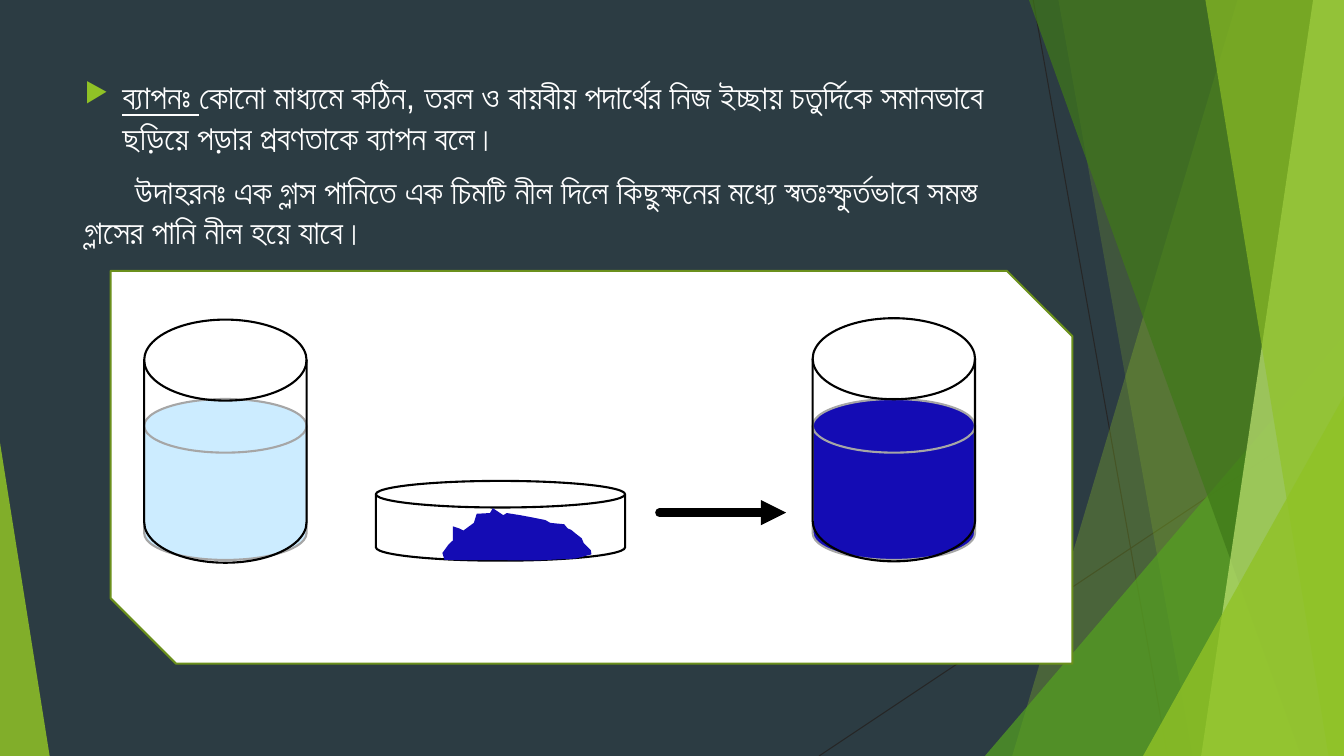
from lxml.etree import SubElement
from pptx import Presentation
from pptx.dml.color import RGBColor
from pptx.enum.shapes import MSO_CONNECTOR, MSO_SHAPE
from pptx.oxml.ns import qn
from pptx.util import Pt

WIDE, HIGH = 960, 540
BLACK, WHITE, LIME, INK = "000000", "FFFFFF", "90C226", "140CB4"


def rgb(code):
    return RGBColor.from_string(code)


def paint(shape, fill=None, line=None, alpha=None):
    """Set fill, its opacity in percent, and a 1.5 pt outline; None means none."""
    shape.shadow.inherit = False
    if fill:
        shape.fill.solid()
        shape.fill.fore_color.rgb = rgb(fill)
    else:
        shape.fill.background()
    if line:
        shape.line.color.rgb = rgb(line)
        shape.line.width = Pt(1.5)
    else:
        shape.line.fill.background()
    if alpha:
        tint = shape.fill._xPr.find(".//" + qn("a:srgbClr"))
        SubElement(tint, qn("a:alpha"), val=str(alpha * 1000))


deck = Presentation()
deck.slide_width, deck.slide_height = Pt(WIDE), Pt(HIGH)
slide = deck.slides.add_slide(deck.slide_layouts[6])
slide.background.fill.solid()
slide.background.fill.fore_color.rgb = rgb("2C3C43")
shapes = slide.shapes

# Thin lines behind the facets, then the arrow is drawn further on
links = []
for x1, y1, x2, y2, color, width in [
    (738, 0, 834, HIGH, "262626", 0.75),
    (WIDE, 290, 585, HIGH, "262626", 0.75),
    (471, 366.2, 561.5, 366.2, BLACK, 6),
]:
    link = shapes.add_connector(
        MSO_CONNECTOR.STRAIGHT, Pt(x1), Pt(y1), Pt(x2), Pt(y2))
    link.line.color.rgb = rgb(color)
    link.line.width = Pt(width)
    SubElement(link._element.spPr, qn("a:effectLst"))
    links.append(link)
arrow = links[-1]
edge = arrow.line._get_or_add_ln()
edge.set("cap", "rnd")
SubElement(edge, qn("a:tailEnd"), type="triangle")

# Facets: slanted bands as (top x, bottom x), triangles as (left, top, width, tip)
for place, color, alpha in [
    ((884, 723), LIME, 30),
    ((756, 852), LIME, 20),
    ((703.5, 240, 256.5, 1), "54A021", 72),
    ((735, 929.5), "3F7819", 70),
    ((938, 858), "C0E474", 70),
    ((861, 949), LIME, 65),
    ((816.5, 283, 143.5, 1), LIME, 80),
    ((0, 316, 35.5, 0), LIME, 85),
]:
    if len(place) == 2:
        top, low = place
        pen = shapes.build_freeform(Pt(top), 0, scale=1.0)
        pen.add_line_segments(
            [(Pt(WIDE), 0), (Pt(WIDE), Pt(HIGH)), (Pt(low), Pt(HIGH))])
        facet = pen.convert_to_shape()
    else:
        left, top, width, tip = place
        facet = shapes.add_shape(MSO_SHAPE.ISOSCELES_TRIANGLE, Pt(left), Pt(top),
                                 Pt(width), Pt(HIGH - top))
        facet.adjustments[0] = tip
    paint(facet, color, alpha=alpha)

panel = shapes.add_shape(MSO_SHAPE.SNIP_2_DIAG_RECTANGLE,
                         Pt(79), Pt(193.5), Pt(687), Pt(280.5))
paint(panel, WHITE, "6B901C")

# Definition and example
frame = shapes.add_textbox(Pt(53.3), Pt(51), Pt(677), Pt(446)).text_frame
frame.word_wrap = True
texts = [
    ("ব্যাপনঃ ", "কোনো মাধ্যমে কঠিন, তরল ও বায়বীয় পদার্থের নিজ ইচ্ছায় চতুর্দিকে "
     "সমানভাবে ছড়িয়ে পড়ার প্রবণতাকে ব্যাপন বলে।"),
    ("উদাহরনঃ এক গ্লাস পানিতে এক চিমটি নীল দিলে কিছুক্ষনের মধ্যে "
     "স্বতঃস্ফুর্তভাবে সমস্ত গ্লাসের পানি নীল হয়ে যাবে।",),
]
paras = [frame.paragraphs[0], frame.add_paragraph()]
for para, parts in zip(paras, texts):
    for part in parts:
        para.add_run().text = part
    para.space_before = Pt(10)
    para.font.size = Pt(24)
    para.font.name = "Arial"
    para.font.color.rgb = rgb(WHITE)
term, case = paras
term.runs[0].font.underline = True
props = term._p.get_or_add_pPr()
props.set("marL", str(Pt(27)))
props.set("indent", str(Pt(-27)))
marks = [SubElement(props, qn("a:buClr")),
         SubElement(props, qn("a:buSzPct"), val="80000"),
         SubElement(props, qn("a:buChar"), char="▶")]
SubElement(marks[0], qn("a:srgbClr"), val=LIME)
for spot, mark in enumerate(marks, 1):
    props.insert(spot, mark)
case._p.get_or_add_pPr().set("indent", str(Pt(36)))

# Dish with its heap of blue powder
heap = [
    (317.5, 400), (316, 395), (320, 389.5), (323, 386.5), (326, 384.5),
    (323.5, 386), (323.5, 376), (328, 377.5), (331, 379), (338.5, 373.5),
    (340.5, 367), (350, 366.5), (352, 363), (359.5, 368), (362, 366.5),
    (371.5, 368), (379.5, 369.5), (389.5, 371.5), (393, 373.5), (403, 374.5),
    (405.5, 377.5), (408, 378.5), (411, 381), (415.5, 384.5), (417, 388),
    (422, 393), (422.5, 396), (415, 398), (411, 399), (384.5, 400.3),
]
DISK = MSO_SHAPE.FLOWCHART_MAGNETIC_DISK
dish = shapes.add_shape(DISK, Pt(268.5), Pt(343.5), Pt(178), Pt(57))
paint(dish, line=BLACK)
shapes._spTree.append(arrow._element)
pen = shapes.build_freeform(Pt(heap[0][0]), Pt(heap[0][1]), scale=1.0)
pen.add_line_segments([(Pt(x), Pt(y)) for x, y in heap[1:]])
paint(pen.convert_to_shape(), INK)

# Each glass: the water, then the clear wall over it
for left, top, water in [(103, 228.3, "CCECFF"), (580.5, 227.3, INK)]:
    for y, high, fill, line in [(285, 115, water, "A6A6A6"),
                                (top, 173.7, None, BLACK)]:
        part = shapes.add_shape(DISK, Pt(left), Pt(y), Pt(116), Pt(high))
        paint(part, fill, line)

deck.save("out.pptx")
